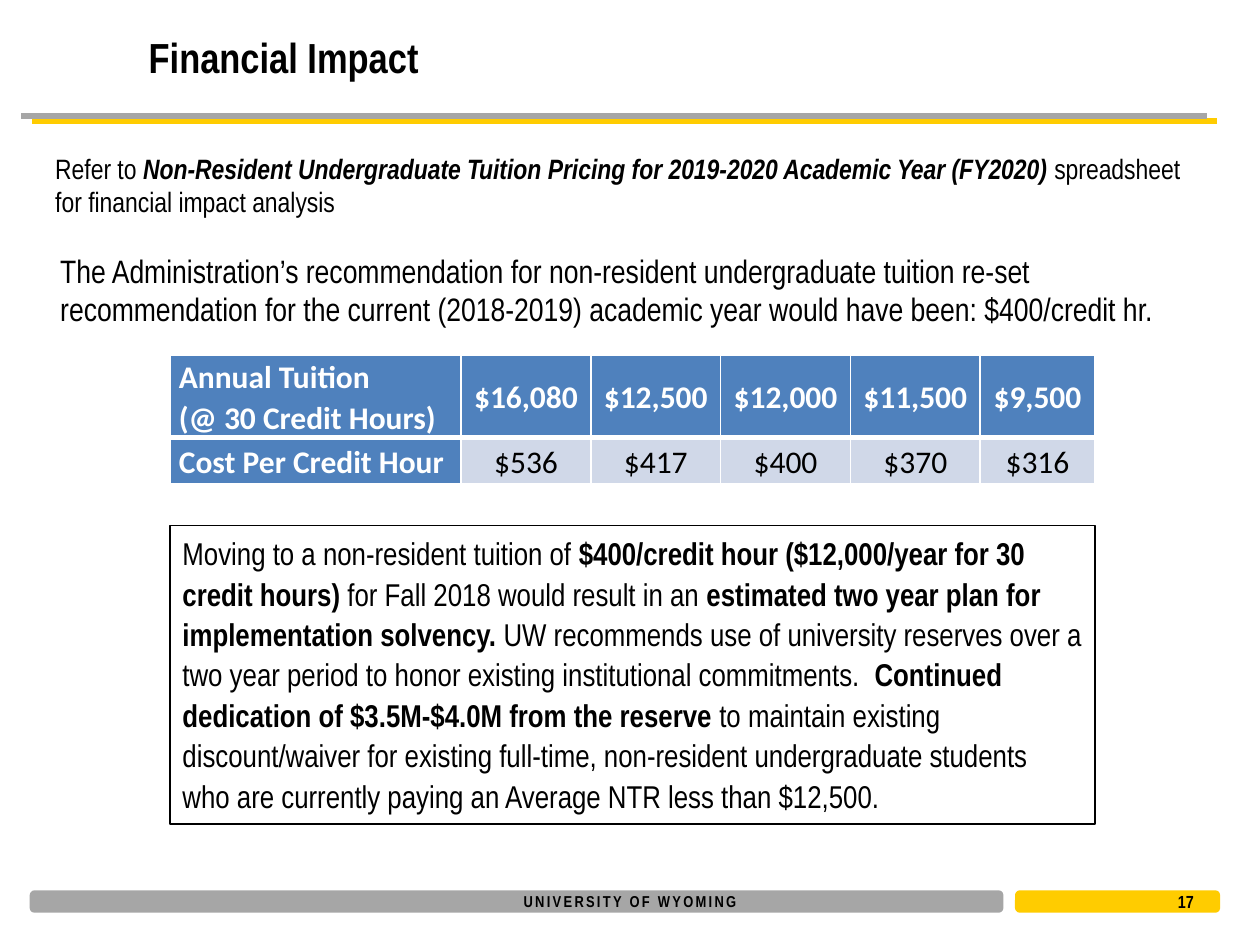
from pptx import Presentation
from pptx.dml.color import RGBColor
from pptx.enum.shapes import MSO_CONNECTOR, MSO_SHAPE
from pptx.enum.text import MSO_ANCHOR, MSO_AUTO_SIZE, PP_ALIGN
from pptx.oxml.ns import qn
from pptx.util import Inches, Pt
from lxml import etree

LEFT, CENTER = PP_ALIGN.LEFT, PP_ALIGN.CENTER
TOP, MIDDLE = MSO_ANCHOR.TOP, MSO_ANCHOR.MIDDLE
RECT, ROUNDED = MSO_SHAPE.RECTANGLE, MSO_SHAPE.ROUNDED_RECTANGLE
STRAIGHT = MSO_CONNECTOR.STRAIGHT

THEME = {
    "font": "Arial Narrow", "table_font": "Calibri",
    "text": "000000", "white": "FFFFFF", "gray": "A6A6A6", "gold": "FFCC00",
    "head": "4F81BD", "band": "D0D8E8",
    "title": 24, "note": 16, "lead": 18.5, "body": 18, "footer": 9, "number": 10,
}

# Content: each run is (text, style), with b for bold and i for italic
TITLE = "Financial Impact"
NOTE = [
    ("Refer to ", ""),
    ("Non-Resident Undergraduate Tuition Pricing for 2019-2020 Academic Year (FY2020)", "bi"),
    (" spreadsheet for financial impact analysis", ""),
]
LEAD = [("The Administration’s recommendation for non-resident undergraduate tuition "
         "re-set recommendation for the current (2018-2019) academic year would have "
         "been: $400/credit hr.", "")]
TUITION = [
    ["Annual Tuition\n(@ 30 Credit Hours)", "$16,080", "$12,500", "$12,000", "$11,500", "$9,500"],
    ["Cost Per Credit Hour", "$536", "$417", "$400", "$370", "$316"],
]
PLAN = [
    ("Moving to a non-resident tuition of ", ""),
    ("$400/credit hour ($12,000/year for 30 credit hours)", "b"),
    (" for Fall 2018 would result in an ", ""),
    ("estimated two year plan for implementation solvency.", "b"),
    (" UW recommends use of university reserves over a two year period to honor "
     "existing institutional commitments.  ", ""),
    ("Continued dedication of $3.5M-$4.0M from the reserve ", "b"),
    ("to maintain existing discount/waiver for existing full-time, non-resident "
     "undergraduate students who are currently paying an Average NTR less than $12,500.", ""),
]
FOOTER, PAGE = "UNIVERSITY OF WYOMING", "17"

# Layout in inches: left, top, width, height
MAIN_X, MAIN_W = 1.35, 7.34
COLS = [2.31] + [1.03] * 4 + [0.91]
ROWS = [0.64, 0.37]
RULES = [("gold", 0.25, 0.96), ("gray", 0.17, 0.92)]
RULE_W = 9.41
BARS = [("gray", 0.25, 7.7), ("gold", 8.07, 1.6)]


def rgb(name):
    return RGBColor.from_string(THEME[name])


def box(*lengths):
    return [Inches(v) for v in lengths]


def add_runs(p, runs, size, font="font", color="text"):
    for text, style in runs:
        r = p.add_run()
        r.text = text
        formats = {"name": THEME[font], "size": Pt(THEME[size]),
                   "bold": "b" in style, "italic": "i" in style}
        for key, value in formats.items():
            setattr(r.font, key, value)
        r.font.color.rgb = rgb(color)


def write(sp, runs, size, anchor=TOP, align=LEFT, wrap=True):
    tf = sp.text_frame
    tf.word_wrap, tf.vertical_anchor = wrap, anchor
    tf.auto_size = MSO_AUTO_SIZE.NONE
    p = tf.paragraphs[0]
    p.alignment = align
    add_runs(p, runs, size)
    return p


def add_rule(s, color, x, y):
    line = s.shapes.add_connector(STRAIGHT, *box(x, y, x + RULE_W, y))
    line.line.color.rgb, line.line.width = rgb(color), Pt(3)
    etree.SubElement(line._element.spPr, qn("a:effectLst"))


def add_panel(s, kind, place, line, width, fill=None):
    sp = s.shapes.add_shape(kind, *box(*place))
    sp.shadow.inherit = False
    sp.line.color.rgb, sp.line.width = rgb(line), Pt(width)
    if fill:
        sp.fill.solid()
        sp.fill.fore_color.rgb = rgb(fill)
    else:
        sp.fill.background()
    return sp


def set_borders(cell, bottom, top):
    tc_pr = cell._tc.get_or_add_tcPr()
    sides = {"a:lnL": 1, "a:lnR": 1, "a:lnT": top, "a:lnB": bottom}
    for i, (side, width) in enumerate(sides.items()):
        ln = etree.Element(qn(side), w=str(Pt(width)))
        fill = etree.SubElement(ln, qn("a:solidFill"))
        etree.SubElement(fill, qn("a:srgbClr"), val=THEME["white"])
        tc_pr.insert(i, ln)


def add_tuition_table(s):
    table = s.shapes.add_table(len(ROWS), len(COLS),
                               *box(MAIN_X, 2.82, MAIN_W, sum(ROWS))).table
    for col, width in zip(table.columns, COLS):
        col.width = Inches(width)
    for row, height in zip(table.rows, ROWS):
        row.height = Inches(height)
    for i, values in enumerate(TUITION):
        for j, value in enumerate(values):
            cell = table.cell(i, j)
            heading = i == 0 or j == 0
            cell.fill.solid()
            cell.fill.fore_color.rgb = rgb("head" if heading else "band")
            cell.vertical_anchor = MIDDLE
            cell.margin_left = cell.margin_right = Inches(0.07)
            cell.margin_top = cell.margin_bottom = 0
            set_borders(cell, bottom=3 if i == 0 else 1, top=3 if i else 1)
            for k, text in enumerate(value.split("\n")):
                tf = cell.text_frame
                p = tf.add_paragraph() if k else tf.paragraphs[0]
                p.alignment, p.line_spacing = (CENTER if j else LEFT), 1.07
                add_runs(p, [(text, "b" if heading else "")], "body", "table_font",
                         "white" if heading else "text")


def main():
    prs = Presentation()
    prs.slide_width, prs.slide_height = box(10, 7.5)
    s = prs.slides.add_slide(prs.slide_layouts[5])

    # Header rule and footer bars
    for rule in RULES:
        add_rule(s, *rule)
    for color, x, width in BARS:
        add_panel(s, ROUNDED, (x, 7.08, width, 0.15), color, 2, color)

    # Title
    title = s.shapes.title
    title.left, title.top, title.width, title.height = box(1.08, 0.15, 8.75, 0.6)
    write(title, [(TITLE, "b")], "title", MIDDLE)

    # Introduction, footer and page number
    texts = [
        ((0.34, 1.15, 9.3, 0.64), NOTE, "note", TOP, LEFT, True),
        ((0.38, 1.94, 9.3, 0.64), LEAD, "lead", TOP, LEFT, True),
        ((9.25, 7.06, 0.5, 0.19), [(PAGE, "b")], "number", MIDDLE, LEFT, True),
        ((4.1, 7.03, 1.8, 0.25), [(FOOTER, "b")], "footer", MIDDLE, CENTER, False),
    ]
    for place, *content in texts:
        p = write(s.shapes.add_textbox(*box(*place)), *content)
    p.runs[0].font._element.set("spc", "130")  # letter spacing of the footer

    # Tuition table and the plan below it
    add_tuition_table(s)
    plan = add_panel(s, RECT, (MAIN_X, 4.17, MAIN_W, 2.37), "text", 0.75)
    p = write(plan, PLAN, "body")
    p.line_spacing, p.space_after = 1.07, Pt(8)

    prs.save("out.pptx")


if __name__ == "__main__":
    main()
